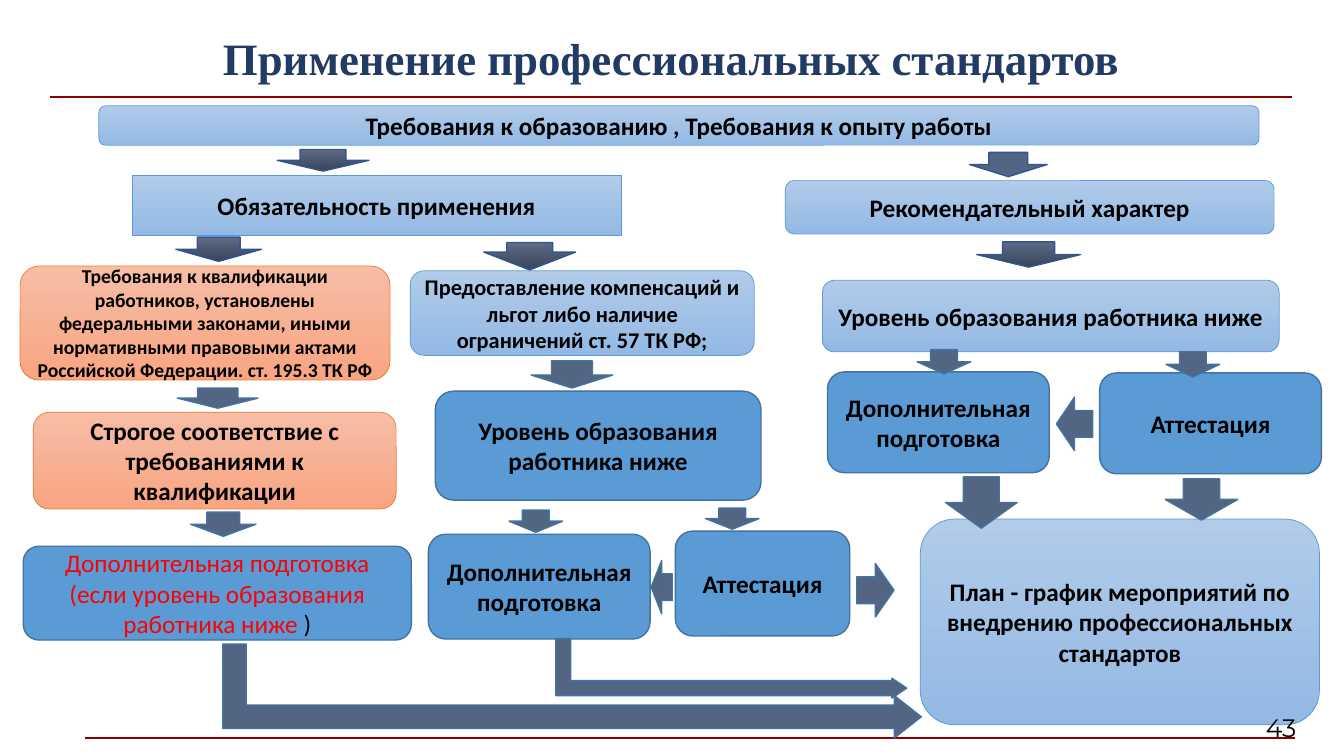
import pptx
import pptx.dml.color
import pptx.enum.shapes
import pptx.enum.text
import pptx.oxml.xmlchemy
import pptx.util

Pt = pptx.util.Pt
RGB = pptx.dml.color.RGBColor
SHAPE = pptx.enum.shapes.MSO_SHAPE
ALIGN = pptx.enum.text.PP_ALIGN

BLACK = RGB(0, 0, 0)
RED = RGB(0xFF, 0, 0)
NAVY = RGB(0x22, 0x3B, 0x64)
MAROON = RGB(0x8E, 0, 0)
BLUE = RGB(0x5B, 0x9B, 0xD5)
STEEL = RGB(0x43, 0x73, 0x9E)
INDIGO = RGB(0x32, 0x54, 0x91)
ORANGE = RGB(0xED, 0x7D, 0x31)
SLATE = RGB(0x52, 0x65, 0x82)
PALE_BLUE = [RGB(0xB1, 0xCB, 0xE9), RGB(0x93, 0xB9, 0xE4)]
PEACH = [RGB(0xF7, 0xBD, 0xA5), RGB(0xF8, 0xA5, 0x82)]
DARK_SLATE = [RGB(0x5E, 0x6D, 0x85), RGB(0x35, 0x44, 0x5A)]

# Box and arrow styles: fill (a list is a vertical gradient), line colour, line width
PALE = (PALE_BLUE, BLUE, 0.5)
WARM = (PEACH, ORANGE, 0.5)
SOLID = (BLUE, STEEL, 1)
FLAT = (SLATE, STEEL, 1)
FLAT_INDIGO = (SLATE, INDIGO, 1)
SHADED = (DARK_SLATE, INDIGO, 1)

TITLE = "Применение профессиональных стандартов"
PAGE_NUMBER = "43"
RULES = [(60.5, 925, 527), (36, 923, 69)]  # left, right, height on the slide

# left, top, width, height, style, font size, text
BOXES = [
    (70.6, 75.6, 828.7, 28.1, PALE, 18, "Требования к образованию , Требования к опыту работы"),
    (94.3, 125.3, 349.2, 43.2, PALE, 18, "Обязательность применения"),
    (560.9, 128.9, 349.2, 38.2, PALE, 18, "Рекомендательный характер"),
    (587.5, 200.2, 326.2, 51.1, PALE, 18, "Уровень образования работника ниже"),
    (293, 193.4, 245.8, 60.5, PALE, 16,
     "Предоставление компенсаций и льгот либо наличие ограничений ст. 57 ТК РФ;"),
    (657.4, 370.8, 285.1, 146.9, PALE, 18,
     "План - график мероприятий по внедрению профессиональных стандартов"),
    (14.4, 190.1, 264.2, 81.4, WARM, 14,
     "Требования к квалификации работников, установлены федеральными законами, "
     "иными нормативными правовыми актами Российской Федерации. ст. 195.3 ТК РФ"),
    (23.8, 294.5, 259.2, 69.1, WARM, 18, "Строгое соответствие с требованиями к квалификации"),
    (311, 279.4, 232.6, 77.8, SOLID, 18, "Уровень образования работника ниже"),
    (16.6, 390.2, 277.2, 67, SOLID, 18,
     [("Дополнительная подготовка (если уровень образования работника ниже ", RED), (")", BLACK)]),
    (306, 381.6, 158.4, 74.9, SOLID, 18, "Дополнительная подготовка"),
    (482.4, 379.4, 124.6, 74.9, SOLID, 18, "Аттестация"),
    (591.1, 265.7, 158.4, 72, SOLID, 18, "Дополнительная подготовка"),
    (785.5, 266.4, 158.4, 72, SOLID, 18, "Аттестация"),
]
SQUARE_BOX = "Обязательность применения"

# left, top, width, height, style, head length as a share of the shorter side
DOWN_ARROWS = [
    (198, 106.8, 65.5, 15.4, SHADED, 0.5),
    (692.6, 108.9, 55.4, 17.3, FLAT_INDIGO, 0.5),
    (345.6, 173.2, 65.5, 19.6, SHADED, 0.65),
    (125.6, 169.4, 61.2, 17.3, SHADED, 0.5),
    (697.7, 172.8, 74.2, 18, SHADED, 0.5),
    (126.7, 277.2, 57.6, 14.4, FLAT, 0.5),
    (379.4, 257.8, 58.3, 19.4, FLAT, 0.48),
    (136.1, 365.8, 46.8, 17.3, FLAT, 0.5),
    (363.6, 364.4, 38.2, 15.8, FLAT, 0.5),
    (504, 362.9, 38.2, 15.1, FLAT, 0.5),
    (655.2, 249.8, 38.2, 17.3, FLAT, 0.5),
    (833, 251.3, 38.2, 18, FLAT, 0.5),
    (675.4, 340.6, 51.1, 36.7, FLAT, 0.5),
    (832.3, 342, 51.8, 29.5, FLAT, 0.5),
]
SIDE_ARROWS = [
    (SHAPE.RIGHT_ARROW, 612, 402.5, 26.6, 38.2),
    (SHAPE.LEFT_ARROW, 465.1, 400.3, 15.1, 38.2),
    (SHAPE.LEFT_ARROW, 754.6, 283.7, 25.9, 38.2),
]
# left, top, width, height as seen after the quarter turn, adjustments
BENT_ARROWS = [
    (159.1, 460.1, 499, 67, (0.25, 0.225, 0.287)),
    (397.1, 456.1, 250.6, 42.5, (0.25, 0.166, 0.25)),
]


def write_text(shape, text, size=18, font="Calibri", color=BLACK, bold=True,
               align=ALIGN.CENTER, margins=(7.2, 3.6), spacing=None):
    """Text is a string, or a list of (string, colour) runs."""
    frame = shape.text_frame
    frame.word_wrap = True
    frame.vertical_anchor = pptx.enum.text.MSO_ANCHOR.MIDDLE
    frame.margin_left = frame.margin_right = Pt(margins[0])
    frame.margin_top = frame.margin_bottom = Pt(margins[1])
    paragraph = frame.paragraphs[0]
    paragraph.alignment = align
    if spacing:
        paragraph.line_spacing = spacing
    for words, run_color in [(text, color)] if isinstance(text, str) else text:
        run = paragraph.add_run()
        run.text = words
        run.font.size = Pt(size)
        run.font.name = font
        run.font.bold = bold
        run.font.color.rgb = run_color


def add_styled_shape(slide, kind, left, top, width, height, style, adjustments=()):
    shape = slide.shapes.add_shape(kind, Pt(left), Pt(top), Pt(width), Pt(height))
    shape.shadow.inherit = False
    fill, line_color, line_width = style
    if isinstance(fill, list):
        shape.fill.gradient()
        shape.fill.gradient_angle = 270
        for stop, color in zip(shape.fill.gradient_stops, fill):
            stop.color.rgb = color
    else:
        shape.fill.solid()
        shape.fill.fore_color.rgb = fill
    shape.line.color.rgb = line_color
    shape.line.width = Pt(line_width)
    for index, value in enumerate(adjustments):
        shape.adjustments[index] = value
    return shape


def add_rule(slide, left, right, height):
    rule = slide.shapes.add_connector(
        pptx.enum.shapes.MSO_CONNECTOR.STRAIGHT, Pt(left), Pt(height), Pt(right), Pt(height))
    rule.line.color.rgb = MAROON
    rule.line.width = Pt(1.5)
    rule._element.spPr.append(pptx.oxml.xmlchemy.OxmlElement("a:effectLst"))


def main():
    presentation = pptx.Presentation()
    presentation.slide_width, presentation.slide_height = Pt(960), Pt(540)
    slide = presentation.slides.add_slide(presentation.slide_layouts[6])

    for rule in RULES:
        add_rule(slide, *rule)
    title = slide.shapes.add_textbox(Pt(36), Pt(18), Pt(887), Pt(51))
    write_text(title, TITLE, size=32, font="Times New Roman", color=NAVY,
               margins=(0, 3.6), spacing=0.9)

    for left, top, width, height, style, size, text in BOXES:
        corners = (0,) if text == SQUARE_BOX else ()
        box = add_styled_shape(slide, SHAPE.ROUNDED_RECTANGLE, left, top, width, height,
                               style, corners)
        write_text(box, text, size=size, bold=isinstance(text, str))

    for left, top, width, height, style, head in DOWN_ARROWS:
        add_styled_shape(slide, SHAPE.DOWN_ARROW, left, top, width, height, style, (0.5, head))
    for kind, left, top, width, height in SIDE_ARROWS:
        add_styled_shape(slide, kind, left, top, width, height, FLAT)
    for left, top, width, height, adjustments in BENT_ARROWS:
        shift = (width - height) / 2
        arrow = add_styled_shape(slide, SHAPE.BENT_UP_ARROW, left + shift, top - shift,
                                 height, width, FLAT, adjustments)
        arrow.rotation = 90

    number = slide.shapes.add_textbox(Pt(883.4), Pt(505.4), Pt(42.5), Pt(28.8))
    write_text(number, PAGE_NUMBER, font="Montserrat", bold=False, align=ALIGN.RIGHT,
               margins=(0, 0))
    presentation.save("out.pptx")


if __name__ == "__main__":
    main()
